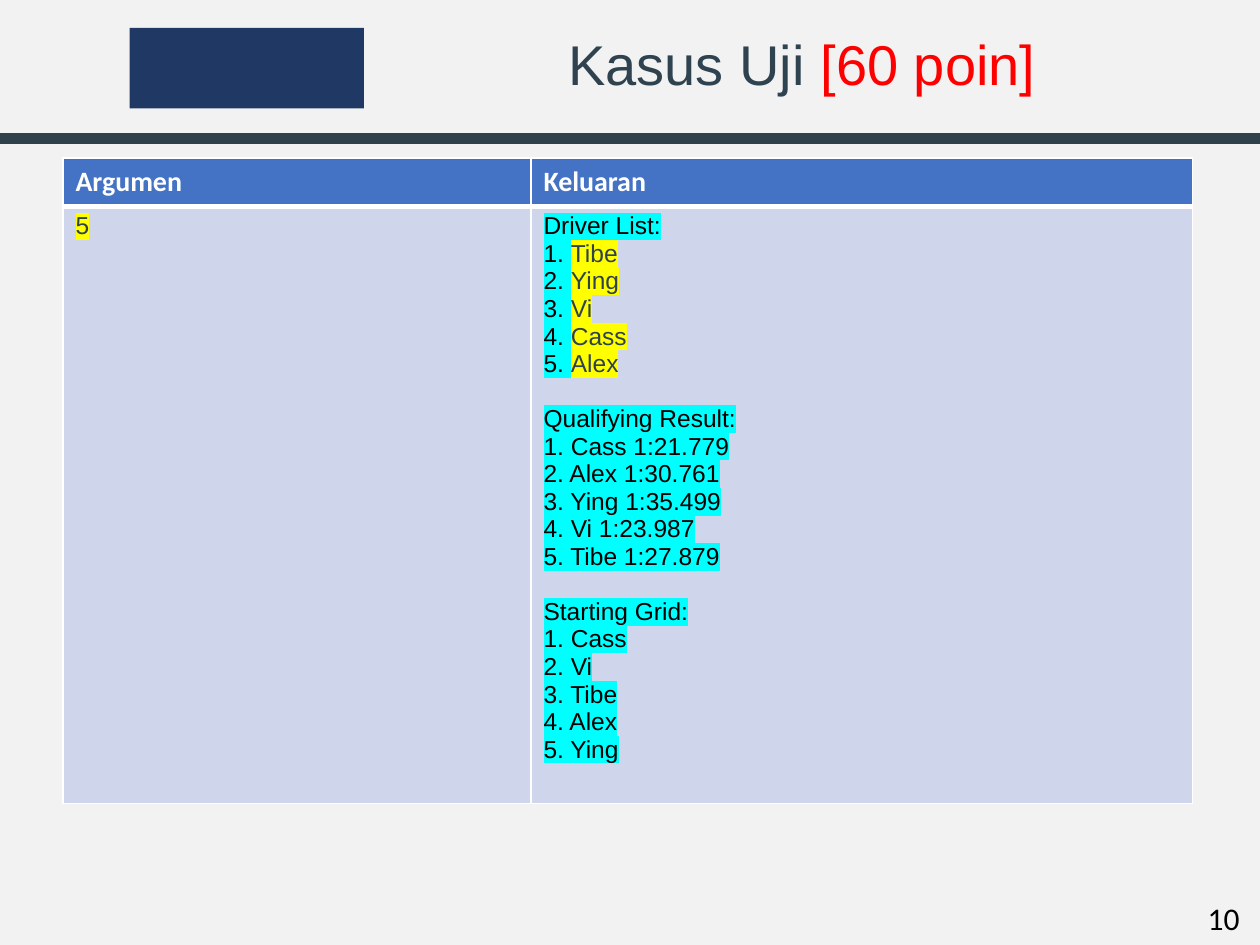
from dataclasses import dataclass

from lxml.etree import SubElement
from pptx import Presentation
from pptx.dml.color import RGBColor
from pptx.enum.shapes import MSO_CONNECTOR, MSO_SHAPE
from pptx.enum.text import MSO_ANCHOR, PP_ALIGN
from pptx.oxml import parse_xml
from pptx.oxml.ns import nsdecls, qn
from pptx.util import Pt


@dataclass(frozen=True)
class Theme:
    paper: str = "F2F2F2"
    ink: str = "2F424F"
    rule: str = "2F424C"
    navy: str = "203864"
    red: str = "FF0000"
    black: str = "000000"
    white: str = "FFFFFF"
    head: str = "4472C4"
    body: str = "CFD5EA"
    yellow: str = "FFFF00"
    cyan: str = "00FFFF"
    sans: str = "Arial"
    label: str = "Calibri"
    title_size: int = 32
    number_size: int = 18
    head_size: int = 16
    body_size: int = 14


T = Theme()
INPUT = dict(color=T.ink, highlight=T.yellow)
OUTPUT = dict(color=T.black, highlight=T.cyan)

DRIVERS = ["Tibe", "Ying", "Vi", "Cass", "Alex"]
QUALIFYING = ["Cass 1:21.779", "Alex 1:30.761", "Ying 1:35.499", "Vi 1:23.987", "Tibe 1:27.879"]
GRID = ["Cass", "Vi", "Tibe", "Alex", "Ying"]


def add_run(p, text, *, size=T.body_size, font=T.sans, color=T.black,
            bold=False, highlight=None):
    r = p.add_run()
    r.text = text
    r.font.size = Pt(size)
    r.font.bold = bold
    r.font.name = font
    r.font.color.rgb = RGBColor.from_string(color)
    if highlight:
        r.font._element.find(qn("a:solidFill")).addnext(parse_xml(
            f'<a:highlight {nsdecls("a")}><a:srgbClr val="{highlight}"/></a:highlight>'))


def add_box(s, box, align=PP_ALIGN.LEFT, anchor=MSO_ANCHOR.TOP, wrap=False):
    tf = s.shapes.add_textbox(*map(Pt, box)).text_frame
    tf.word_wrap = wrap
    tf.vertical_anchor = anchor
    p = tf.paragraphs[0]
    p.alignment = align
    return p


def add_header(s, box):
    x, y, w, h = box
    block = s.shapes.add_shape(MSO_SHAPE.RECTANGLE, Pt(x + 74), Pt(y + 16), Pt(134), Pt(46))
    block.shadow.inherit = False
    block.fill.solid()
    block.fill.fore_color.rgb = RGBColor.from_string(T.navy)
    block.line.fill.background()
    line = s.shapes.add_connector(MSO_CONNECTOR.STRAIGHT, Pt(x), Pt(y + h), Pt(x + w), Pt(y + h))
    line.line.color.rgb = RGBColor.from_string(T.rule)
    line.line.width = Pt(6)
    SubElement(line._element.spPr, qn("a:effectLst"))
    p = add_box(s, (x + 233.3, y + 17, 450, 43.2), PP_ALIGN.CENTER, MSO_ANCHOR.MIDDLE, True)
    p.line_spacing = 0.9
    add_run(p, "Kasus Uji ", size=T.title_size, color=T.ink)
    add_run(p, "[60 poin]", size=T.title_size, color=T.red)


def style_cell(cell, fill, bottom):
    tcPr = cell._tc.get_or_add_tcPr()
    for side, width in (("L", 1), ("R", 1), ("T", 1), ("B", bottom)):
        tcPr.append(parse_xml(
            f'<a:ln{side} {nsdecls("a")} w="{Pt(width)}"><a:solidFill>'
            f'<a:srgbClr val="{T.white}"/></a:solidFill></a:ln{side}>'))
    cell.fill.solid()
    cell.fill.fore_color.rgb = RGBColor.from_string(fill)


def add_output(tf):
    sections = (("Driver List:", DRIVERS, INPUT),
                ("Qualifying Result:", QUALIFYING, OUTPUT),
                ("Starting Grid:", GRID, OUTPUT))
    p = tf.paragraphs[0]
    for i, (heading, items, style) in enumerate(sections):
        if i:
            p.space_after = Pt(15.75)
            p = tf.add_paragraph()
        add_run(p, heading, **OUTPUT)
        for n, item in enumerate(items, 1):
            p = tf.add_paragraph()
            if style is OUTPUT:
                add_run(p, f"{n}. {item}", **OUTPUT)
            else:
                add_run(p, f"{n}. ", **OUTPUT)
                add_run(p, item, **style)


def add_cases(s, box):
    x, y, w, h = box
    table = s.shapes.add_table(2, 2, *map(Pt, box)).table
    for col, width in zip(table.columns, (267.4, w - 267.4)):
        col.width = Pt(width)
    for row, height in zip(table.rows, (27.6, h - 27.6)):
        row.height = Pt(height)
    for c, heading in enumerate(("Argumen", "Keluaran")):
        cell = table.cell(0, c)
        style_cell(cell, T.head, 3)
        add_run(cell.text_frame.paragraphs[0], heading, size=T.head_size,
                font=T.label, color=T.white, bold=True)
        style_cell(table.cell(1, c), T.body, 1)
    add_run(table.cell(1, 0).text_frame.paragraphs[0], "5", **INPUT)
    add_output(table.cell(1, 1).text_frame)


def add_number(s, box):
    add_run(add_box(s, box), "10", size=T.number_size, font=T.label)


def main():
    prs = Presentation()
    prs.slide_width, prs.slide_height = Pt(720), Pt(540)
    s = prs.slides.add_slide(prs.slide_layouts[6])
    s.background.fill.solid()
    s.background.fill.fore_color.rgb = RGBColor.from_string(T.paper)
    add_header(s, (0, 0, 720, 79.2))
    add_cases(s, (36, 90.3, 645.4, 178.6))
    add_number(s, (683, 510.2, 36, 29))
    prs.save("out.pptx")


if __name__ == "__main__":
    main()
